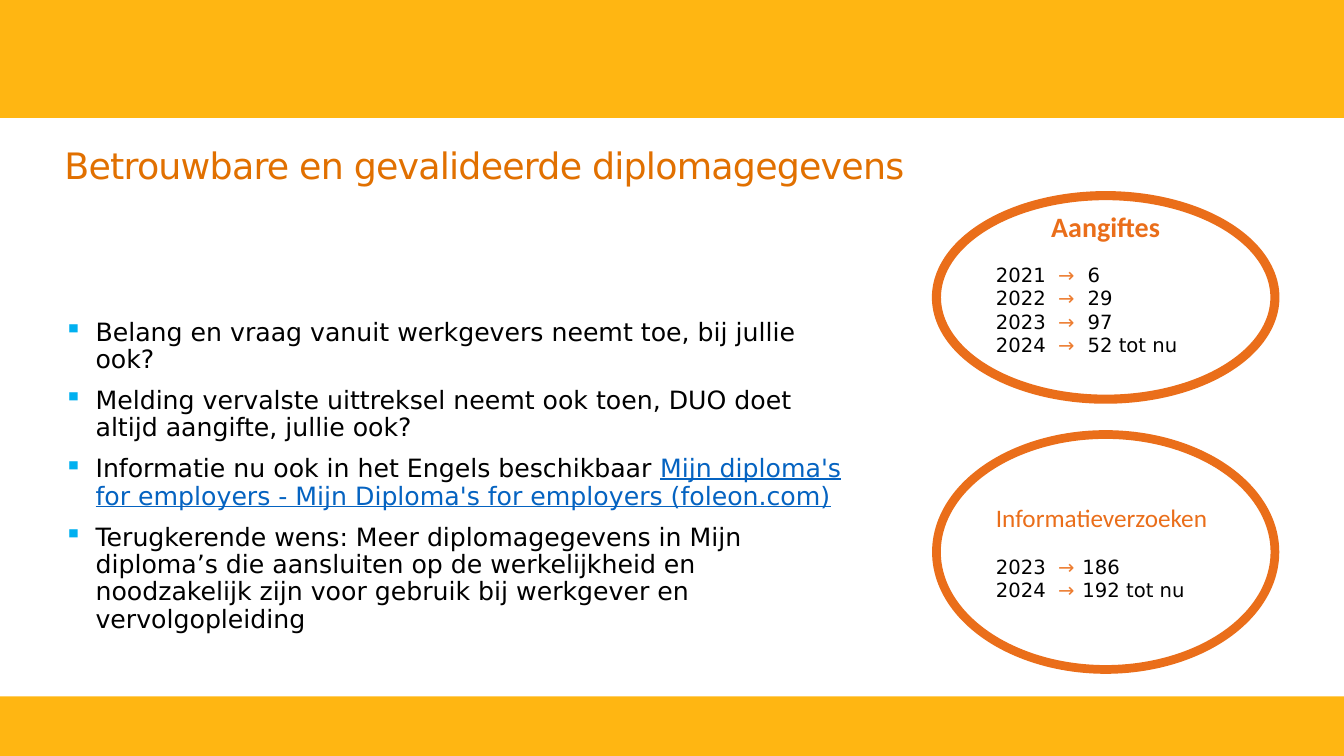
from lxml import etree
from pptx import Presentation
from pptx.dml.color import RGBColor
from pptx.enum.shapes import MSO_SHAPE as SHAPE
from pptx.enum.text import MSO_ANCHOR as ANCHOR, PP_ALIGN as ALIGN
from pptx.oxml.ns import qn
from pptx.util import Cm, Pt

COLORS = {
    "band": "FFB612", "title": "E17000", "text": "000000", "bullet": "00B0F0",
    "link": "0563C1", "ring": "EA6E1A", "arrow": "ED7D31",
}
SANS, HEAD = "DejaVu Sans", "Calibri"
WIDTH, HEIGHT = 33.87, 19.05

# Each bullet is a list of (text, is_link) runs
BULLETS = [
    [("Belang en vraag vanuit werkgevers neemt toe, bij jullie ook?", False)],
    [("Melding vervalste uittreksel neemt ook toen, DUO doet altijd aangifte, "
      "jullie ook?", False)],
    [("Informatie nu ook in het Engels beschikbaar ", False),
     ("Mijn diploma's for employers - Mijn Diploma's for employers (foleon.com)",
      True)],
    [("Terugkerende wens: Meer diplomagegevens in Mijn diploma’s die aansluiten "
      "op de werkelijkheid en noodzakelijk zijn voor gebruik bij werkgever en "
      "vervolgopleiding", False)],
]
REPORTS = [("2021", "6"), ("2022", "29"), ("2023", "97"), ("2024", "52 tot nu")]
REQUESTS = [("2023", "186"), ("2024", "192 tot nu")]


def rgb(name):
    return RGBColor.from_string(COLORS[name])


def add_run(p, text, size, color, font=SANS):
    r = p.add_run()
    r.text = text
    r.font.size, r.font.name = Pt(size), font
    r.font.color.rgb = rgb(color)
    return r


def next_paragraph(tf):
    first = tf.paragraphs[0]
    return tf.add_paragraph() if first.runs else first


def add_band(s, top, height):
    sp = s.shapes.add_shape(SHAPE.RECTANGLE, 0, Cm(top), Cm(WIDTH), Cm(height))
    sp.shadow.inherit = False
    sp.fill.solid()
    sp.fill.fore_color.rgb = rgb("band")
    sp.line.fill.background()


def set_title(s, text):
    sp = s.shapes.title
    sp.left, sp.top, sp.width, sp.height = Cm(1.37), Cm(3.43), Cm(29.06), Cm(1.6)
    tf = sp.text_frame
    tf.word_wrap, tf.vertical_anchor = True, ANCHOR.MIDDLE
    p = tf.paragraphs[0]
    p.alignment, p.line_spacing = ALIGN.LEFT, 0.9
    r = add_run(p, text, 26, "title")
    r.font._element.set("spc", "-60")


def set_bullet(p):
    pPr = p._p.get_or_add_pPr()
    pPr.set("marL", str(Cm(0.79)))
    pPr.set("indent", str(-Cm(0.79)))
    color = etree.SubElement(pPr, qn("a:buClr"))
    etree.SubElement(color, qn("a:srgbClr"), val=COLORS["bullet"])
    etree.SubElement(pPr, qn("a:buChar"), char="▪")


def add_bullets(s, bullets):
    sp = s.shapes.add_textbox(Cm(1.37), Cm(7.92), Cm(20.52), Cm(8.95))
    tf = sp.text_frame
    tf.word_wrap = True
    for i, runs in enumerate(bullets):
        p = next_paragraph(tf)
        set_bullet(p)
        p.line_spacing = 0.9
        p.space_before = Pt(10 if i else 0)
        for text, is_link in runs:
            r = add_run(p, text, 18, "link" if is_link else "text")
            r.font.underline = is_link


def set_tabs(p, stops):
    tabs = etree.SubElement(p._p.get_or_add_pPr(), qn("a:tabLst"))
    for stop in stops:
        etree.SubElement(tabs, qn("a:tab"), pos=str(Cm(stop)), algn="l")


def add_ring(s, top, height, line_width):
    sp = s.shapes.add_shape(SHAPE.OVAL, Cm(23.6), Cm(top), Cm(8.53), Cm(height))
    sp.shadow.inherit = False
    sp.fill.background()
    sp.line.color.rgb = rgb("ring")
    sp.line.width = Pt(line_width)
    tf = sp.text_frame
    tf.word_wrap, tf.vertical_anchor = True, ANCHOR.MIDDLE
    return tf


def add_counts(tf, heading, size, align, bold, rows, gap, value_stop):
    p = next_paragraph(tf)
    p.alignment = align
    add_run(p, heading, size, "ring", HEAD).font.bold = bold
    for i, (year, count) in enumerate(rows):
        p = next_paragraph(tf)
        set_tabs(p, [1.57, value_stop])
        p.alignment = ALIGN.LEFT
        p.space_before = Pt(0 if i else gap)
        add_run(p, year + "\t", 14, "text")
        add_run(p, "→\t", 14, "arrow")
        add_run(p, count, 14, "text")


def main():
    prs = Presentation()
    prs.slide_width, prs.slide_height = Cm(WIDTH), Cm(HEIGHT)
    s = prs.slides.add_slide(prs.slide_layouts[5])

    # Bands at the top and bottom
    add_band(s, 0, 2.97)
    add_band(s, 17.55, 1.5)

    # Title and bullets
    set_title(s, "Betrouwbare en gevalideerde diplomagegevens")
    add_bullets(s, BULLETS)

    # Rings with yearly counts
    tf = add_ring(s, 4.93, 5.13, 6.5)
    tf.margin_bottom = Cm(0.84)
    add_counts(tf, "Aangiftes", 20, ALIGN.CENTER, True, REPORTS, 14, 2.31)
    tf = add_ring(s, 10.95, 5.92, 6.25)
    add_counts(tf, "Informatieverzoeken", 18, ALIGN.LEFT, False, REQUESTS, 16, 2.18)

    prs.save("out.pptx")


if __name__ == "__main__":
    main()
